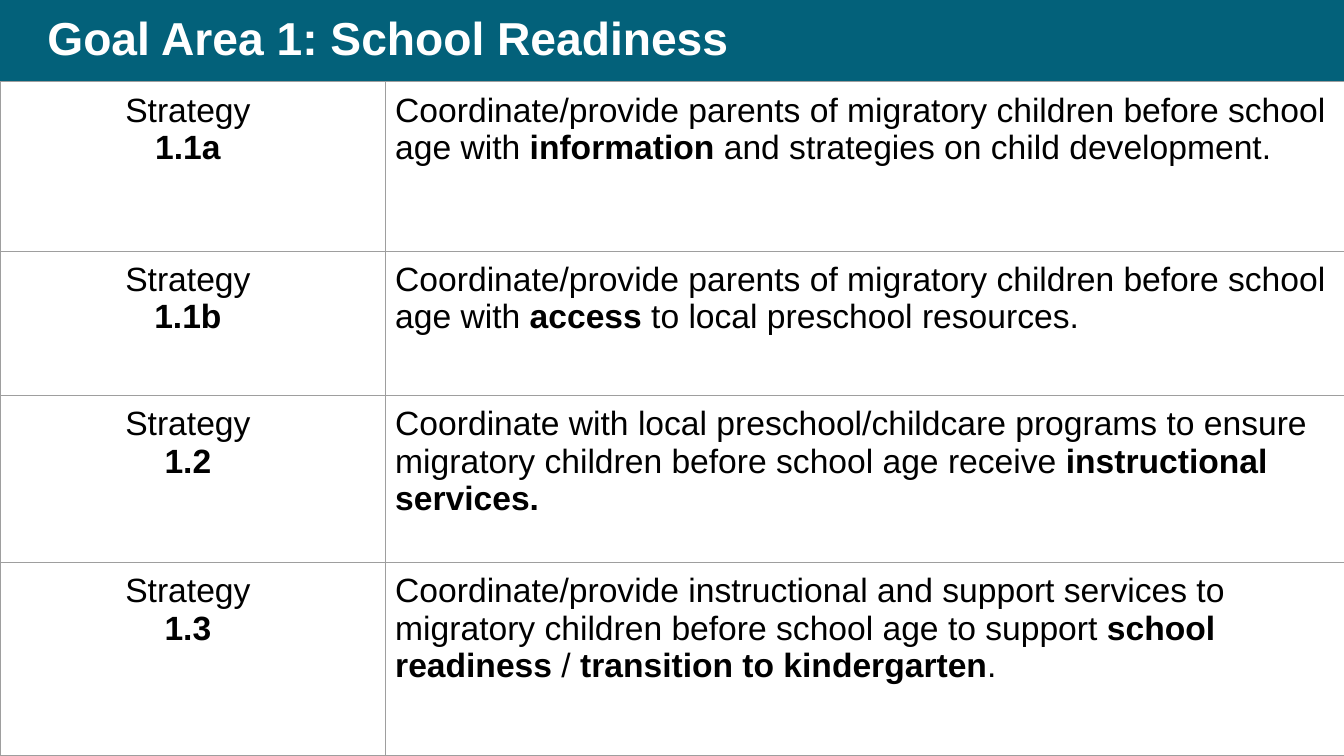
"""Build the school readiness slide: a title band above a table of strategies."""
from lxml.etree import SubElement
from pptx import Presentation
from pptx.dml.color import RGBColor as RGB
from pptx.enum.shapes import MSO_SHAPE as Shape
from pptx.enum.text import MSO_ANCHOR as Anchor, PP_ALIGN as Align
from pptx.oxml.ns import qn
from pptx.util import Inches, Pt

HUES = {"band": "03617A", "rule": "9E9E9E", "text": "000000", "title": "FFFFFF"}
WIDE, TALL, TOP = 13.33, 7.5, 0.81
COLS = [3.82, 9.51]
ROWS = [
    ("1.1a ", 1.68, [
        ("Coordinate/provide parents of migratory children before school age with ", False),
        ("information ", True),
        ("and strategies on child development.", False)]),
    ("1.1b ", 1.43, [
        ("Coordinate/provide parents of migratory children before school age with ", False),
        ("access ", True),
        ("to local preschool resources.", False)]),
    ("1.2 ", 1.66, [
        ("Coordinate with local preschool/childcare programs to ensure "
         "migratory children before school age receive ", False),
        ("instructional services.", True)]),
    ("1.3 ", 1.92, [
        ("Coordinate/provide instructional and support services to "
         "migratory children before school age to support ", False),
        ("school readiness ", True),
        ("/ ", False),
        ("transition to kindergarten", True),
        (".", False)]),
]


def add_run(para, text, size, hue, bold):
    run = para.add_run()
    run.text = text
    run.font.name = "Arial"
    run.font.size = Pt(size)
    run.font.bold = bold
    run.font.color.rgb = RGB.from_string(HUES[hue])


def set_cell(cell):
    cell.margin_left = cell.margin_right = Inches(0.1)
    cell.margin_top = cell.margin_bottom = Inches(0.1)
    cell.vertical_anchor = Anchor.TOP
    props = cell._tc.get_or_add_tcPr()
    for side in ("a:lnL", "a:lnR", "a:lnT", "a:lnB"):
        line = SubElement(props, qn(side), w=str(Pt(0.75)))
        fill = SubElement(line, qn("a:solidFill"))
        SubElement(fill, qn("a:srgbClr"), val=HUES["rule"])
    cell.fill.background()


deck = Presentation()
deck.slide_width, deck.slide_height = Inches(WIDE), Inches(TALL)
slide = deck.slides.add_slide(deck.slide_layouts[5])

band = slide.shapes.add_shape(Shape.RECTANGLE, 0, 0, Inches(WIDE), Inches(TOP))
band.shadow.inherit = False
band.fill.solid()
band.fill.fore_color.rgb = RGB.from_string(HUES["band"])
band.line.fill.background()

title = slide.shapes.title
title._element.addprevious(band._element)
title.left, title.top = Inches(0.37), Inches(0)
title.width, title.height = Inches(12.32), Inches(TOP)
frame = title.text_frame
frame.word_wrap = True
frame.vertical_anchor = Anchor.MIDDLE
frame.margin_left = frame.margin_right = Inches(0.1)
frame.margin_top = frame.margin_bottom = Inches(0.05)
head = frame.paragraphs[0]
head.alignment = Align.LEFT
head.line_spacing = 0.9
add_run(head, "Goal Area 1: School Readiness", 33, "title", True)

table = slide.shapes.add_table(len(ROWS), len(COLS), Inches(0), Inches(TOP),
                               Inches(WIDE), Inches(TALL - TOP)).table
table.first_row = table.horz_banding = False
for col, width in zip(table.columns, COLS):
    col.width = Inches(width)

for row, (code, height, parts) in zip(table.rows, ROWS):
    row.height = Inches(height)
    for cell in row.cells:
        set_cell(cell)
    label, goal = [cell.text_frame.paragraphs[0] for cell in row.cells]
    label.alignment = Align.CENTER
    add_run(label, "Strategy ", 24, "text", False)
    label.add_line_break()
    add_run(label, code, 24, "text", True)
    goal.alignment = Align.LEFT
    for text, bold in parts:
        add_run(goal, text, 24, "text", bold)

deck.save("out.pptx")
